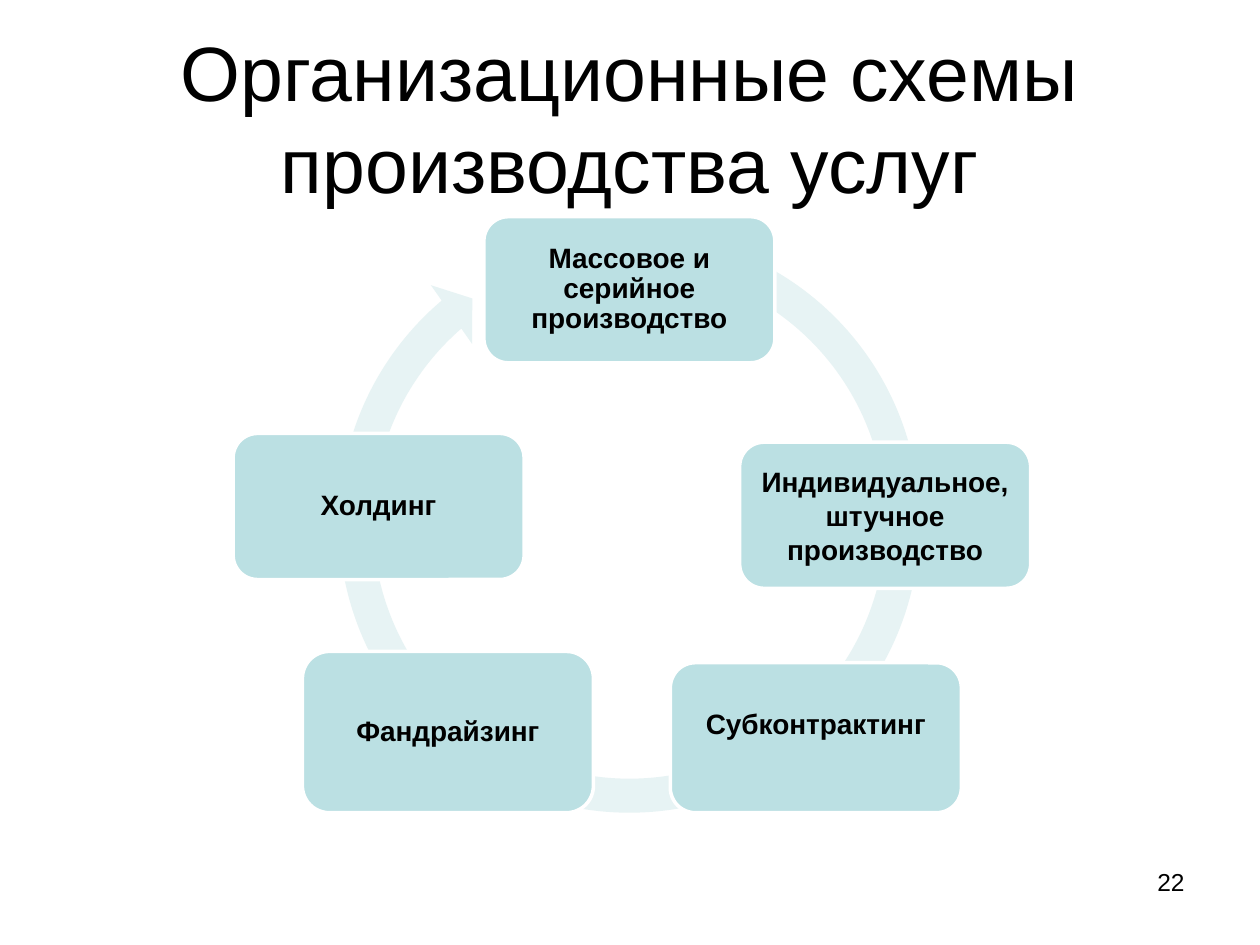
"""Build a slide with a cycle of five ways to organise the production of services."""
import pptx
import pptx.dml.color
import pptx.enum.shapes
import pptx.enum.text
import pptx.util

Inches = pptx.util.Inches
Pt = pptx.util.Pt
RGBColor = pptx.dml.color.RGBColor
MSO_SHAPE = pptx.enum.shapes.MSO_SHAPE
MSO_ANCHOR = pptx.enum.text.MSO_ANCHOR
PP_ALIGN = pptx.enum.text.PP_ALIGN

BLACK = RGBColor(0x00, 0x00, 0x00)
WHITE = RGBColor(0xFF, 0xFF, 0xFF)
STEP_FILL = RGBColor(0xBB, 0xE0, 0xE3)
ARROW_FILL = RGBColor(0xE7, 0xF3, 0xF4)

STEP_WIDTH = 2.31
STEP_INSET = 0.07
STEP_FRAME = {
    "margin_left": Inches(STEP_INSET),
    "margin_right": Inches(STEP_INSET),
    "margin_top": Inches(STEP_INSET),
}


def write_text(shape, text, size, alignment, anchor, bold=False, line_spacing=1.0):
    frame = shape.text_frame
    frame.word_wrap = True
    frame.vertical_anchor = anchor
    paragraph = frame.paragraphs[0]
    paragraph.alignment = alignment
    paragraph.line_spacing = line_spacing
    run = paragraph.add_run()
    run.text = text
    run.font.color.rgb = BLACK
    font_format = {"name": "Arial", "size": Pt(size), "bold": bold}
    for name, value in font_format.items():
        setattr(run.font, name, value)


presentation = pptx.Presentation()
presentation.slide_width = Inches(10)
presentation.slide_height = Inches(7.5)
slide = presentation.slides.add_slide(presentation.slide_layouts[6])

title = slide.shapes.add_textbox(Inches(0.5), Inches(0.3), Inches(9), Inches(1.25))
write_text(title, "Организационные схемы производства услуг", 44,
           PP_ALIGN.CENTER, MSO_ANCHOR.MIDDLE)

cycle_arrow = slide.shapes.add_shape(
    MSO_SHAPE.CIRCULAR_ARROW, Inches(2.54), Inches(1.69), Inches(4.91), Inches(4.91))
for index, value in enumerate((0.055, 3.307, 137.657, 173.922, 0.058)):
    cycle_arrow.adjustments[index] = value
cycle_arrow.shadow.inherit = False
cycle_arrow.fill.solid()
cycle_arrow.fill.fore_color.rgb = ARROW_FILL
cycle_arrow.line.fill.background()

steps = (
    ("Массовое и серийное производство", 3.84, 1.72, 1.16, 0.9, STEP_INSET),
    ("Индивидуальное, штучное производство", 5.87, 3.51, 1.16, 1.0, STEP_INSET),
    ("Субконтрактинг", 5.32, 5.26, 1.19, 1.0, 0.3),
    ("Фандрайзинг", 2.4, 5.17, 1.28, 0.9, STEP_INSET),
    ("Холдинг", 1.85, 3.44, 1.16, 0.9, STEP_INSET),
)
for text, left, top, height, line_spacing, bottom_inset in steps:
    step = slide.shapes.add_shape(
        MSO_SHAPE.ROUNDED_RECTANGLE,
        Inches(left), Inches(top), Inches(STEP_WIDTH), Inches(height))
    step.shadow.inherit = False
    step.fill.solid()
    step.fill.fore_color.rgb = STEP_FILL
    step.line.color.rgb = WHITE
    step.line.width = Pt(2)
    for name, value in STEP_FRAME.items():
        setattr(step.text_frame, name, value)
    step.text_frame.margin_bottom = Inches(bottom_inset)
    write_text(step, text, 16, PP_ALIGN.CENTER, MSO_ANCHOR.MIDDLE, True, line_spacing)

slide_number = slide.shapes.add_textbox(
    Inches(7.17), Inches(6.83), Inches(2.33), Inches(0.52))
write_text(slide_number, "22", 14, PP_ALIGN.RIGHT, MSO_ANCHOR.TOP)

presentation.save("out.pptx")
